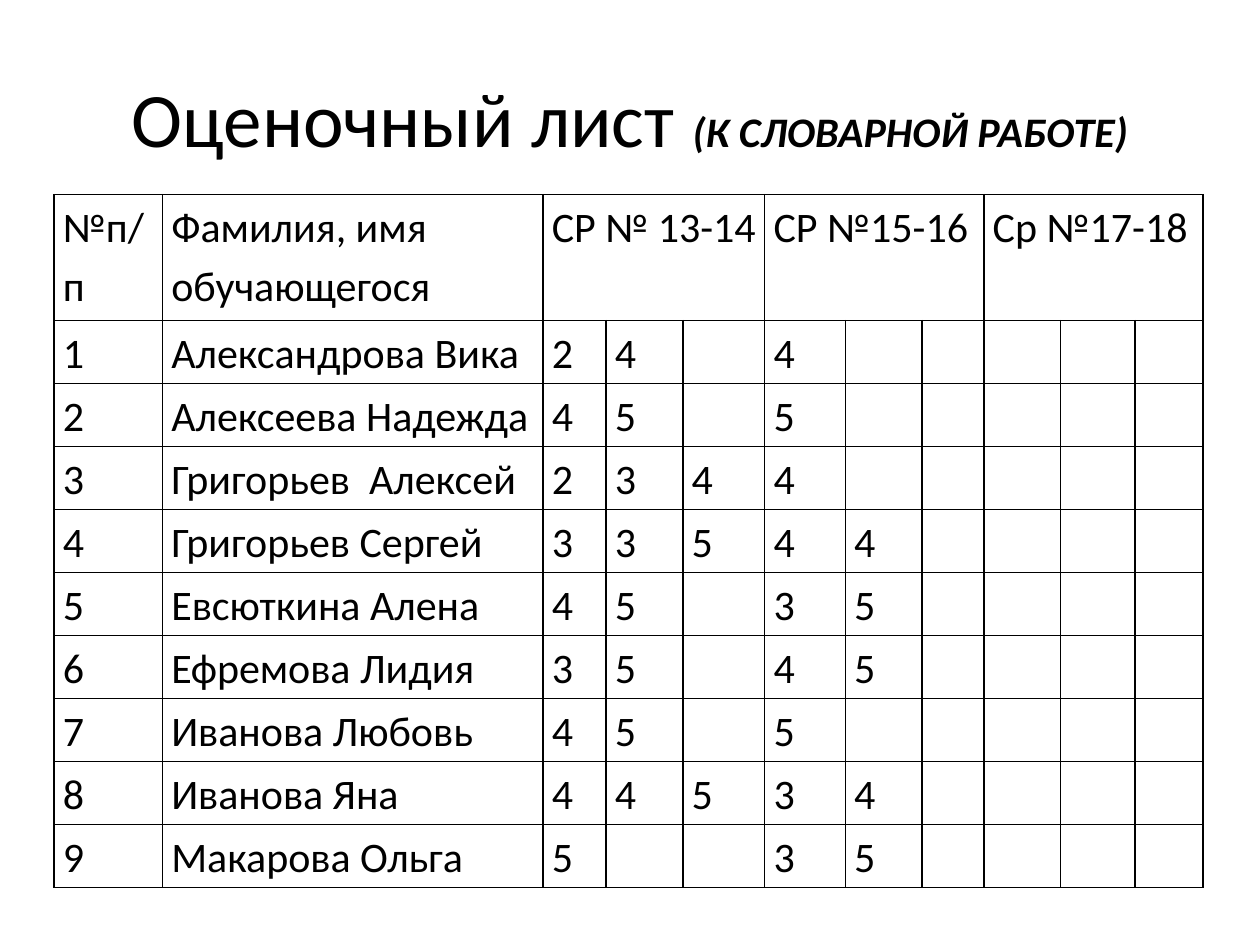
from lxml import etree
from pptx import Presentation
from pptx import util as u
from pptx.dml.color import RGBColor
from pptx.enum import text
from pptx.oxml.ns import qn

# Column widths in percent of the slide width, row height as a share of its height
COLUMNS = [8.6, 30.2, 5, 6.1, 6.5, 6.4, 6.1, 4.9, 6.1, 5.9, 5.4]
ROW = 1 / 15
HEADINGS = {0: ["№п/п"], 1: ["Фамилия, имя", "обучающегося"],
            2: ["СР № 13-14"], 5: ["СР №15-16"], 8: ["Ср №17-18"]}
TESTS = [2, 5, 8]
ATTEMPTS = 3
# Pupil, marks for the first test, marks for the second test
PUPILS = [
    ("Александрова Вика", "24", "4"),
    ("Алексеева Надежда", "45", "5"),
    ("Григорьев  Алексей", "234", "4"),
    ("Григорьев Сергей", "335", "44"),
    ("Евсюткина Алена", "45", "35"),
    ("Ефремова Лидия", "35", "45"),
    ("Иванова Любовь", "45", "5"),
    ("Иванова Яна", "445", "34"),
    ("Макарова Ольга", "5", "35"),
]


def color(value):
    return RGBColor.from_string(value)


class Sheet:
    font = "Calibri"
    ink = "000000"
    paper = "FFFFFF"
    size = 24

    def __init__(self, deck):
        self.deck = deck
        self.page = deck.slides.add_slide(deck.slide_layouts[6])

    def across(self, share):
        return round(self.deck.slide_width * share)

    def down(self, share):
        return round(self.deck.slide_height * share)

    def span(self, para, words, size, strong=False):
        span = para.add_run()
        span.text = words
        span.font.name = self.font
        span.font.size = u.Pt(size)
        span.font.color.rgb = color(self.ink)
        span.font.bold = span.font.italic = strong

    def title(self, left, top, width, height, parts):
        """Centred line built from (words, size, strong) parts."""
        box = self.page.shapes.add_textbox(self.across(left), self.down(top),
                                           self.across(width), self.down(height))
        frame = box.text_frame
        frame.word_wrap = True
        frame.vertical_anchor = text.MSO_ANCHOR.MIDDLE
        para = frame.paragraphs[0]
        para.alignment = text.PP_ALIGN.CENTER
        for part in parts:
            self.span(para, *part)

    def table(self, left, top, columns, rows):
        """Empty ruled table; columns and rows are shares of the slide."""
        frame = self.page.shapes.add_table(
            len(rows), len(columns), self.across(left), self.down(top),
            self.across(sum(columns)), self.down(sum(rows)))
        table = frame.table
        table.first_row = table.horz_banding = False
        for column, share in zip(table.columns, columns):
            column.width = self.across(share)
        for row, share in zip(table.rows, rows):
            row.height = self.down(share)
        for cell in table.iter_cells():
            cell.margin_left = cell.margin_right = u.Inches(0.07)
            cell.margin_top = cell.margin_bottom = 0
            self.borders(cell)
            cell.fill.solid()
            cell.fill.fore_color.rgb = color(self.paper)
        return table

    def borders(self, cell):
        properties = cell._tc.get_or_add_tcPr()
        for side in ("a:lnL", "a:lnR", "a:lnT", "a:lnB"):
            line = etree.SubElement(properties, qn(side), w=str(u.Pt(1)))
            fill = etree.SubElement(line, qn("a:solidFill"))
            etree.SubElement(fill, qn("a:srgbClr"), val=self.ink)

    def cell_text(self, cell, lines):
        frame = cell.text_frame
        for index, words in enumerate(lines):
            para = frame.add_paragraph() if index else frame.paragraphs[0]
            para.line_spacing = 1.15
            self.span(para, words, self.size)


def main():
    deck = Presentation()
    deck.slide_width, deck.slide_height = u.Inches(10), u.Inches(7.5)
    sheet = Sheet(deck)
    sheet.title(0.05, 0.04, 0.9, 1 / 6, [
        ("Оценочный лист ", 44), ("(К СЛОВАРНОЙ РАБОТЕ)", 24, True)])

    grades = sheet.table(0.043, 0.206, [width / 100 for width in COLUMNS],
                         [2 * ROW] + [ROW] * len(PUPILS))
    for first in TESTS:
        grades.cell(0, first).merge(grades.cell(0, first + ATTEMPTS - 1))
    for column, lines in HEADINGS.items():
        sheet.cell_text(grades.cell(0, column), lines)

    for number, (pupil, *tests) in enumerate(PUPILS, 1):
        sheet.cell_text(grades.cell(number, 0), [str(number)])
        sheet.cell_text(grades.cell(number, 1), [pupil])
        for first, marks in zip(TESTS, tests):
            for attempt, mark in enumerate(marks):
                sheet.cell_text(grades.cell(number, first + attempt), [mark])
    deck.save("out.pptx")


if __name__ == "__main__":
    main()
